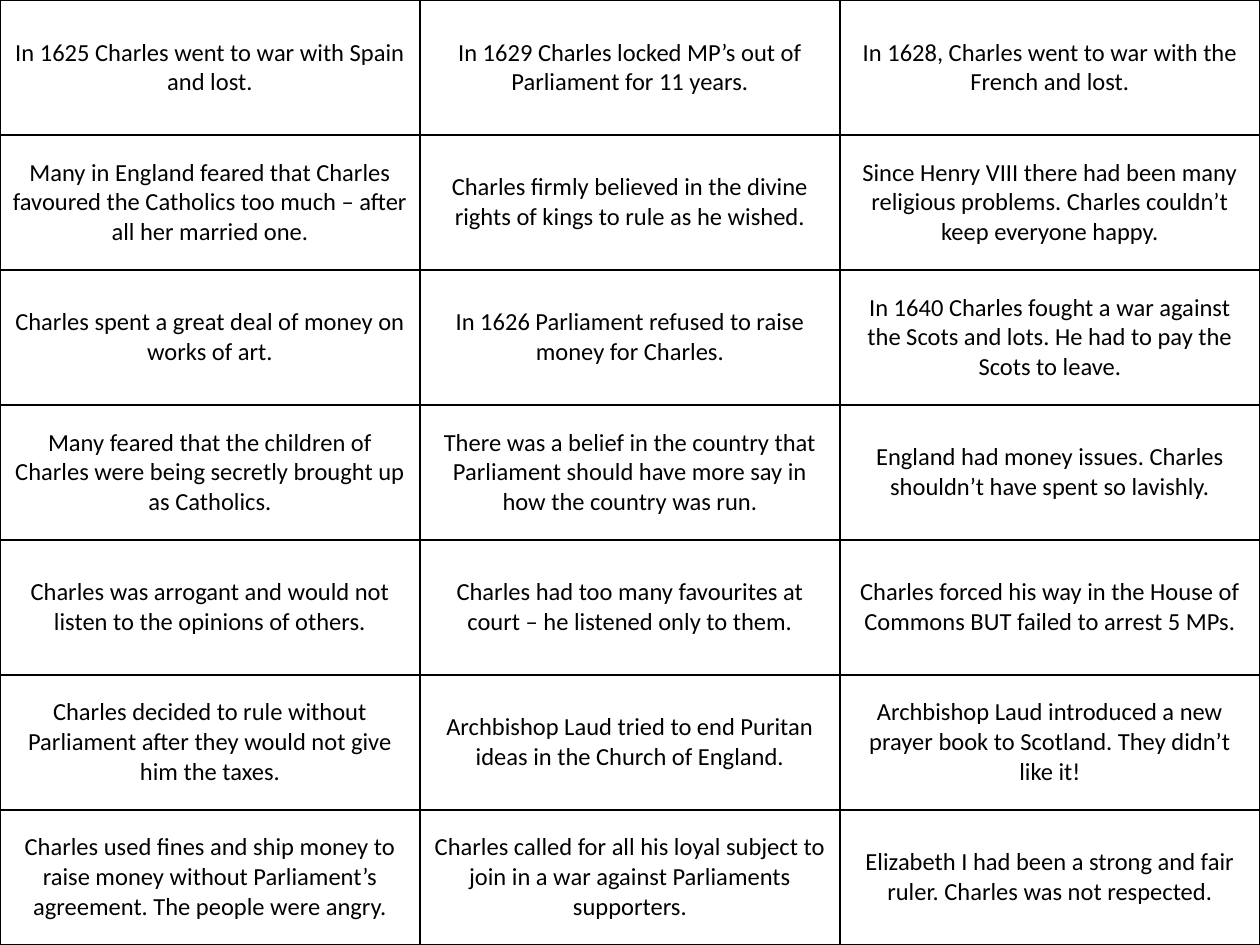
from lxml import etree
from pptx import Presentation
from pptx.dml.color import RGBColor
from pptx.enum.text import MSO_ANCHOR, PP_ALIGN
from pptx.oxml.ns import qn
from pptx.util import Cm, Pt

MIDDLE = MSO_ANCHOR.MIDDLE
CENTER = PP_ALIGN.CENTER

CARDS = [
    ("In 1625 Charles went to war with Spain and lost.",
     "In 1629 Charles locked MP’s out of Parliament for 11 years.",
     "In 1628, Charles went to war with the French and lost."),
    ("Many in England feared that Charles favoured the Catholics too much – after all her married one.",
     "Charles firmly believed in the divine rights of kings to rule as he wished.",
     "Since Henry VIII there had been many religious problems. Charles couldn’t keep everyone happy."),
    ("Charles spent a great deal of money on works of art.",
     "In 1626 Parliament refused to raise money for Charles.",
     "In 1640 Charles fought a war against the Scots and lots. He had to pay the Scots to leave."),
    ("Many feared that the children of Charles were being secretly brought up as Catholics.",
     "There was a belief in the country that Parliament should have more say in how the country was run.",
     "England had money issues. Charles shouldn’t have spent so lavishly."),
    ("Charles was arrogant and would not listen to the opinions of others.",
     "Charles had too many favourites at court – he listened only to them.",
     "Charles forced his way in the House of Commons BUT failed to arrest 5 MPs."),
    ("Charles decided to rule without Parliament after they would not give him the taxes.",
     "Archbishop Laud tried to end Puritan ideas in the Church of England.",
     "Archbishop Laud introduced a new prayer book to Scotland. They didn’t like it!"),
    ("Charles used fines and ship money to raise money without Parliament’s agreement. The people were angry.",
     "Charles called for all his loyal subject to join in a war against Parliaments supporters.",
     "Elizabeth I had been a strong and fair ruler. Charles was not respected."),
]

COLORS = {"text": "000000", "border": "000000"}
FONT = {"name": "Calibri", "size": Pt(14), "bold": False}
TABLE_FLAGS = {"first_row": False, "horz_banding": False}
BORDER_WIDTH = Pt(1)
SLIDE_WIDTH, SLIDE_HEIGHT = Cm(25.4), Cm(19.05)


def apply_format(target, values):
    for name, value in values.items():
        setattr(target, name, value)


def add_borders(cell):
    properties = cell._tc.get_or_add_tcPr()
    for side in ("lnL", "lnR", "lnT", "lnB"):
        line = etree.SubElement(properties, qn(f"a:{side}"), w=str(BORDER_WIDTH))
        fill = etree.SubElement(line, qn("a:solidFill"))
        etree.SubElement(fill, qn("a:srgbClr"), val=COLORS["border"])


def fill_card(cell, text):
    add_borders(cell)
    cell.fill.background()
    cell.vertical_anchor = MIDDLE
    paragraph = cell.text_frame.paragraphs[0]
    paragraph.alignment = CENTER
    run = paragraph.add_run()
    run.text = text
    apply_format(run.font, FONT)
    run.font.color.rgb = RGBColor.from_string(COLORS["text"])


def main():
    presentation = Presentation()
    apply_format(presentation, {"slide_width": SLIDE_WIDTH, "slide_height": SLIDE_HEIGHT})
    slide = presentation.slides.add_slide(presentation.slide_layouts[6])

    table = slide.shapes.add_table(
        len(CARDS), len(CARDS[0]), Cm(0), Cm(0), SLIDE_WIDTH, SLIDE_HEIGHT).table
    apply_format(table, TABLE_FLAGS)
    for row_index, row in enumerate(CARDS):
        for column_index, text in enumerate(row):
            fill_card(table.cell(row_index, column_index), text)

    presentation.save("out.pptx")


if __name__ == "__main__":
    main()
